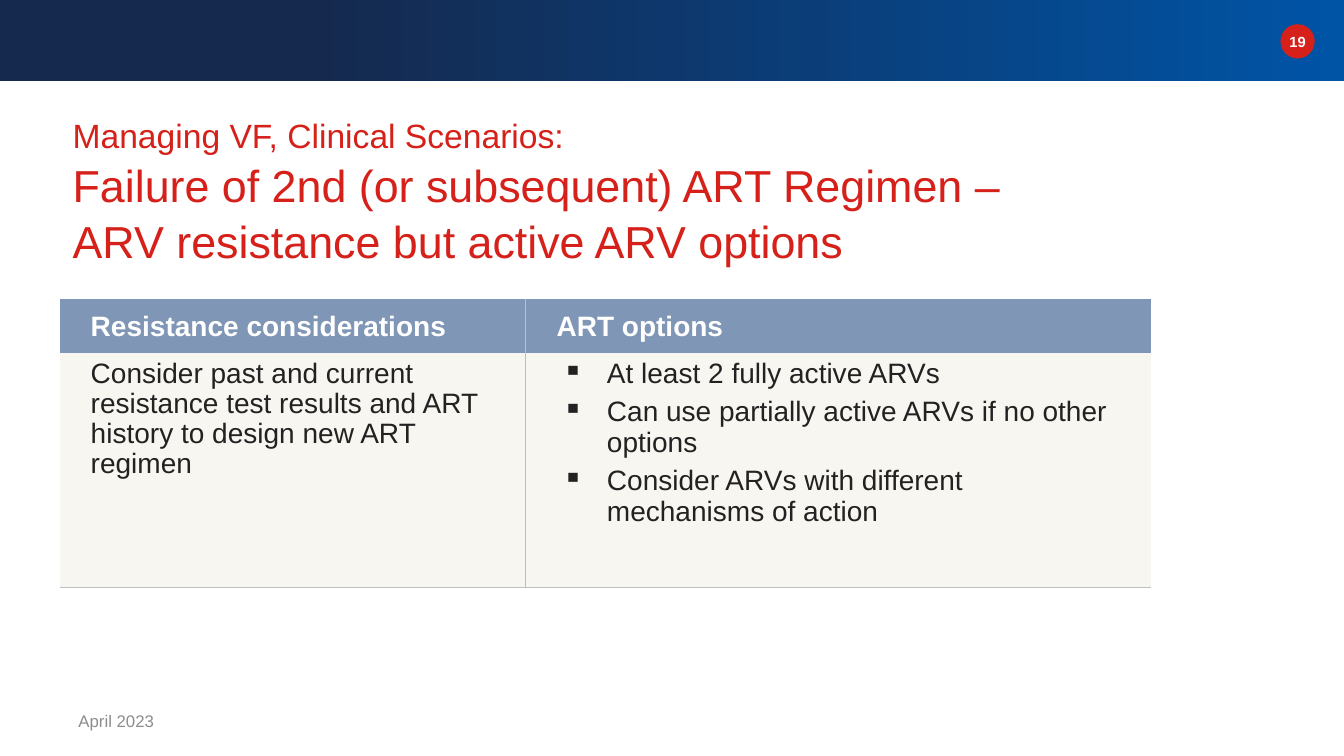
from lxml.etree import SubElement
from pptx import Presentation
from pptx.dml.color import RGBColor
from pptx.enum.shapes import MSO_SHAPE
from pptx.enum.text import MSO_ANCHOR, MSO_AUTO_SIZE, PP_ALIGN
from pptx.oxml import parse_xml
from pptx.oxml.ns import nsdecls, qn
from pptx.util import Inches, Pt

COLORS = {
    "navy": "15294E", "blue": "0054A6", "red": "D6201A", "white": "FFFFFF",
    "header": "8096B6", "cell": "F8F6F0", "ink": "222222",
    "muted": "8D8D8D", "rule": "BFBFBF",
}
GRID_COLUMNS, GRID_ROWS = 133.3, 75
NO_TABLE_STYLE = "{2D5ABB26-0587-4C30-8999-92F81FD0307C}"


def rgb(name):
    return RGBColor.from_string(COLORS[name])


class Deck:
    def __init__(self, font="Arial"):
        self.font = font
        self.prs = Presentation()
        self.prs.slide_width, self.prs.slide_height = Inches(13.33), Inches(7.5)
        self.slide = self.prs.slides.add_slide(self.prs.slide_layouts[5])

    def x(self, columns):
        return round(self.prs.slide_width * columns / GRID_COLUMNS)

    def y(self, rows):
        return round(self.prs.slide_height * rows / GRID_ROWS)

    def box(self, left, top, width, height):
        return self.x(left), self.y(top), self.x(width), self.y(height)

    def style(self, paragraph, size, color, bold=False):
        for run in paragraph.runs:
            run.font.name, run.font.size, run.font.bold = self.font, Pt(size), bold
            run.font.color.rgb = rgb(color)

    def shape(self, kind, area, *colors):
        """Add a borderless shape; two colours make a left-to-right gradient."""
        shape = self.slide.shapes.add_shape(kind, *self.box(*area))
        shape.shadow.inherit = False
        shape.line.fill.background()
        if len(colors) == 1:
            shape.fill.solid()
            shape.fill.fore_color.rgb = rgb(colors[0])
            return
        shape.fill.gradient()
        shape.fill.gradient_angle = 0
        for stop, position, color in zip(shape.fill.gradient_stops, (0.23, 1), colors):
            stop.position, stop.color.rgb = position, rgb(color)

    def text(self, area, words, size, color, bold=False, align=PP_ALIGN.LEFT):
        frame = self.slide.shapes.add_textbox(*self.box(*area)).text_frame
        frame.word_wrap, frame.vertical_anchor = True, MSO_ANCHOR.MIDDLE
        frame.text = words
        frame.paragraphs[0].alignment = align
        self.style(frame.paragraphs[0], size, color, bold)

    def title(self, area, lines, sizes, color):
        title = self.slide.shapes.title
        title.left, title.top, title.width, title.height = self.box(*area)
        frame = title.text_frame
        frame.text = "\n".join(lines)
        frame.word_wrap, frame.auto_size = True, MSO_AUTO_SIZE.NONE
        frame.vertical_anchor = MSO_ANCHOR.MIDDLE
        for paragraph, size in zip(frame.paragraphs, sizes):
            paragraph.alignment, paragraph.line_spacing = PP_ALIGN.LEFT, 1.05
            self.style(paragraph, size, color)

    def bullet(self, paragraph):
        props = paragraph._p.get_or_add_pPr()
        props.set("marL", str(Inches(0.5)))
        props.set("indent", str(Inches(-0.44)))
        bullet_color = SubElement(props, qn("a:buClr"))
        SubElement(bullet_color, qn("a:srgbClr")).set("val", COLORS["ink"])
        SubElement(props, qn("a:buChar")).set("char", "▪")
        paragraph.space_after = Pt(6)

    def borders(self, cell, sides):
        props = cell._tc.get_or_add_tcPr()
        for index, side in enumerate(sides):
            props.insert(index, parse_xml(
                f'<a:ln{side} {nsdecls("a")} w="{Pt(1)}"><a:solidFill>'
                f'<a:srgbClr val="{COLORS["rule"]}"/></a:solidFill></a:ln{side}>'))

    def cell(self, cell, lines, is_header, sides):
        cell.margin_left = cell.margin_right = Inches(0.31)
        cell.margin_top = cell.margin_bottom = Inches(0.06)
        cell.vertical_anchor = MSO_ANCHOR.MIDDLE if is_header else MSO_ANCHOR.TOP
        cell.fill.solid()
        cell.fill.fore_color.rgb = rgb("header" if is_header else "cell")
        self.borders(cell, sides)
        cell.text_frame.text = "\n".join(lines)
        for paragraph in cell.text_frame.paragraphs:
            if len(lines) > 1:
                self.bullet(paragraph)
            paragraph.line_spacing = 1.02 if is_header else 0.97
            self.style(paragraph, 20, "white" if is_header else "ink", is_header)

    def table(self, left, top, widths, heights, content):
        area = self.box(left, top, sum(widths), sum(heights))
        table = self.slide.shapes.add_table(len(heights), len(widths), *area).table
        table._tbl.tblPr.find(qn("a:tableStyleId")).text = NO_TABLE_STYLE
        for column, width in zip(table.columns, widths):
            column.width = self.x(width)
        for row, height in zip(table.rows, heights):
            row.height = self.y(height)
        for r, row in enumerate(content):
            for c, lines in enumerate(row):
                sides = ("L" if c else "R") + ("B" if r else "")
                self.cell(table.cell(r, c), lines, r == 0, sides)


def main():
    deck = Deck()
    deck.shape(MSO_SHAPE.RECTANGLE, (0, 0, GRID_COLUMNS, 8), "navy", "blue")
    deck.shape(MSO_SHAPE.OVAL, (127, 2.4, 3.4, 3.4), "red")
    deck.text((126.5, 2.7, 4.4, 2.8), "19", 10.5, "white", True, PP_ALIGN.CENTER)
    deck.title((6.2, 11, 115, 15.7), [
        "Managing VF, Clinical Scenarios:",
        "Failure of 2nd (or subsequent) ART Regimen –",
        "ARV resistance but active ARV options",
    ], (24, 32, 32), "red")
    deck.table(5.9, 29.7, (46.2, 62.1), (5.3, 23.3), [
        [["Resistance considerations"], ["ART options"]],
        [["Consider past and current resistance test results and ART "
          "history to design new ART regimen"],
         ["At least 2 fully active ARVs",
          "Can use partially active ARVs if no other options",
          "Consider ARVs with different mechanisms of action"]],
    ])
    deck.text((6.8, 69.5, 30, 4), "April 2023", 12, "muted")
    deck.prs.save("out.pptx")


if __name__ == "__main__":
    main()
